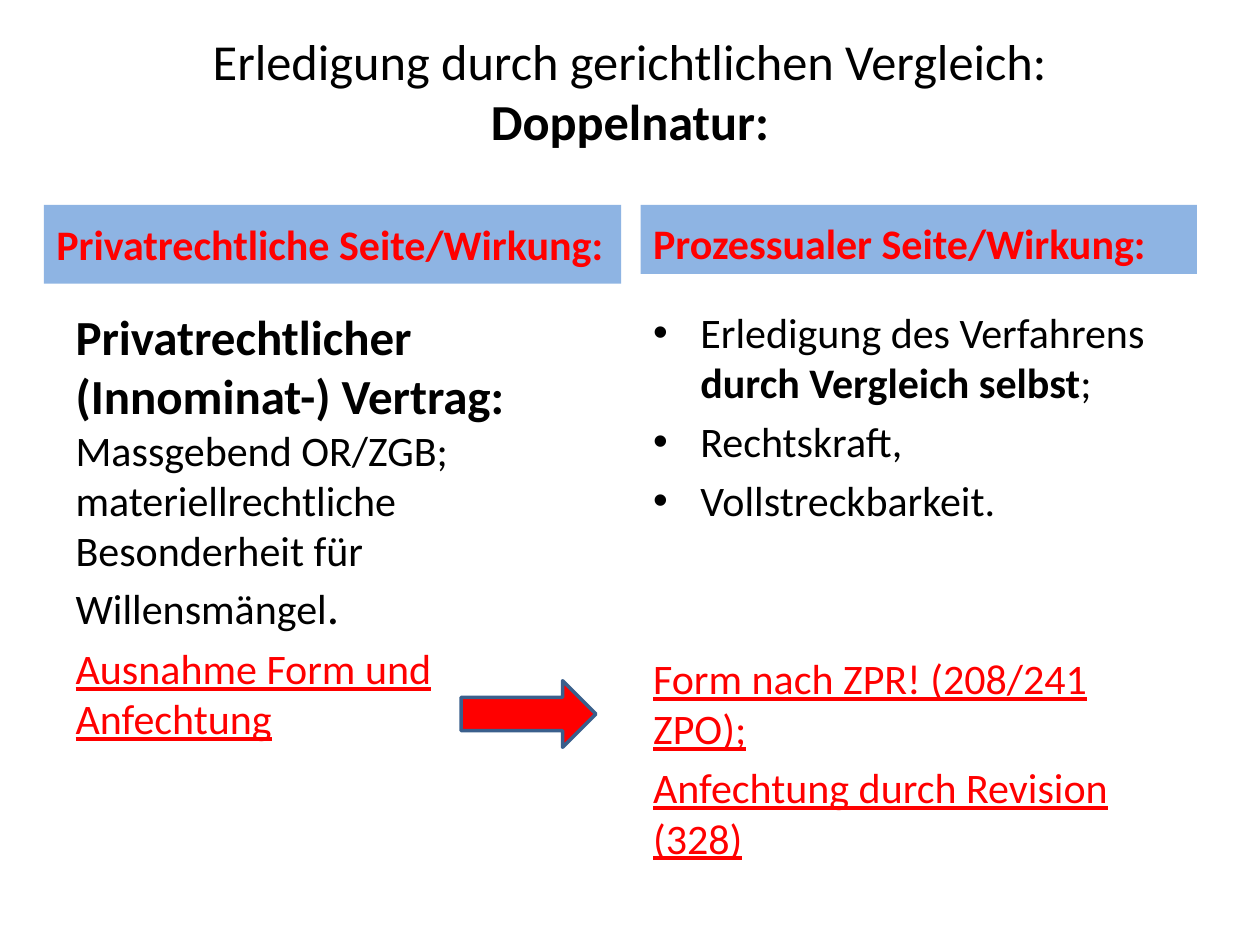
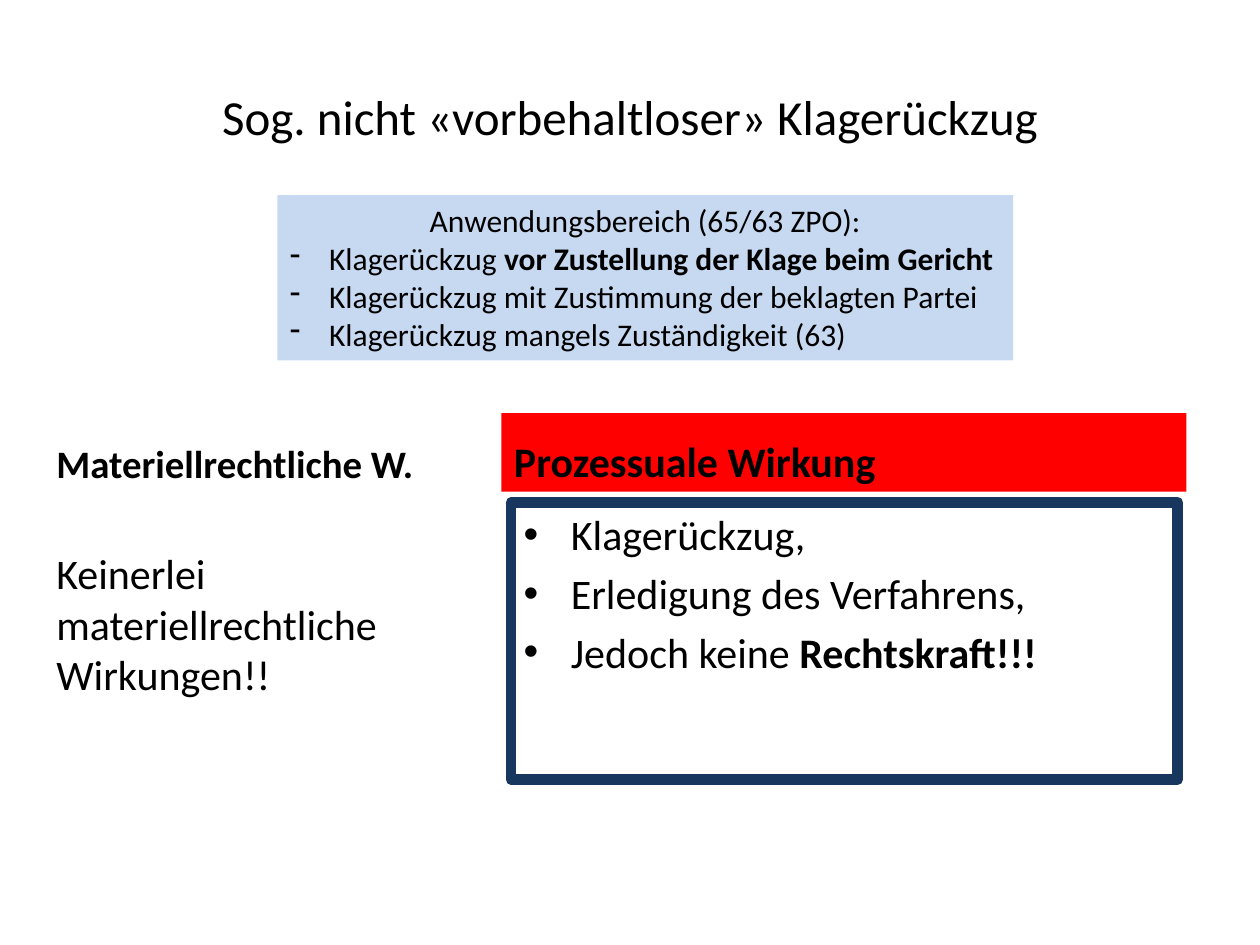
from pptx import Presentation
from pptx.dml.color import RGBColor
from pptx.enum.shapes import MSO_SHAPE
from pptx.enum.text import MSO_ANCHOR, MSO_AUTO_SIZE, PP_ALIGN
from pptx.oxml.xmlchemy import OxmlElement
from pptx.util import Pt

FONT = "Calibri"
COLORS = {
    "text": "000000",
    "red": "FF0000",
    "header": "8EB4E3",
    "scope": "C6D9F1",
    "frame": "17375E",
    "arrow_line": "3A5F8C",
}
COMPARISON_LAYOUT = 3 + 1
TITLE, LEFT_HEADER, LEFT_BODY, RIGHT_HEADER, RIGHT_BODY = range(5)
TITLE_AREA = (36, 21.5, 648, 90)


def color(name):
    return RGBColor.from_string(COLORS[name])


def span(text, size=24, bold=False, ink="text", underline=False):
    return text, size, bold, ink, underline


def add_spans(para, spans):
    """Add the runs to the paragraph; None stands for a line break."""
    for item in spans:
        if item is None:
            para.add_line_break()
            continue
        text, size, bold, ink, underline = item
        run = para.add_run()
        run.text = text
        run.font.name = FONT
        run.font.size = Pt(size)
        run.font.bold = bold
        run.font.underline = underline
        run.font.color.rgb = color(ink)


def set_bullet(para, char, indent):
    """Hang the paragraph on a bullet, or remove the bullet if char is None."""
    properties = para._p.get_or_add_pPr()
    properties.set("marL", str(Pt(indent)))
    properties.set("indent", str(-Pt(indent)))
    bullet = OxmlElement("a:buChar" if char else "a:buNone")
    if char:
        bullet.set("char", char)
    properties.append(bullet)


def write_paragraphs(box, paragraphs, bullet=None, indent=0):
    frame = box.text_frame
    for number, spans in enumerate(paragraphs):
        para = frame.paragraphs[0] if number == 0 else frame.add_paragraph()
        add_spans(para, spans)
        set_bullet(para, bullet, indent)
    return frame.paragraphs


def move(box, area):
    box.left, box.top, box.width, box.height = map(Pt, area)


def place(page, index, area, anchor, fill=None):
    """Move a placeholder of the page and set its text anchor and fill."""
    box = page.placeholders[index]
    move(box, area)
    frame = box.text_frame
    frame.word_wrap = True
    frame.auto_size = MSO_AUTO_SIZE.NONE
    frame.vertical_anchor = anchor
    if fill:
        box.fill.solid()
        box.fill.fore_color.rgb = color(fill)
    return box


def add_title(page, spans):
    box = place(page, TITLE, TITLE_AREA, MSO_ANCHOR.MIDDLE)
    para = box.text_frame.paragraphs[0]
    para.alignment = PP_ALIGN.CENTER
    add_spans(para, spans)
    return box


def add_header(page, index, area, text, fill=None, ink="text", size=24,
               anchor=MSO_ANCHOR.BOTTOM):
    box = place(page, index, area, anchor, fill)
    write_paragraphs(box, [[span(text, size, True, ink)]])


def add_body(page, index, area, paragraphs, bullet=None):
    box = place(page, index, area, MSO_ANCHOR.TOP)
    write_paragraphs(box, paragraphs, bullet, 27 if bullet else 0)
    return box


def add_arrow(page, area):
    arrow = page.shapes.add_shape(MSO_SHAPE.RIGHT_ARROW, *map(Pt, area))
    arrow.shadow.inherit = False
    arrow.fill.solid()
    arrow.fill.fore_color.rgb = color("red")
    arrow.line.color.rgb = color("arrow_line")
    arrow.line.width = Pt(2)


def add_scope_box(page, area, heading, items):
    box = page.shapes.add_textbox(*map(Pt, area))
    box.fill.solid()
    box.fill.fore_color.rgb = color("scope")
    frame = box.text_frame
    frame.word_wrap = False
    frame.paragraphs[0].alignment = PP_ALIGN.CENTER
    add_spans(frame.paragraphs[0], [heading])
    for spans in items:
        para = frame.add_paragraph()
        para.alignment = PP_ALIGN.LEFT
        add_spans(para, spans)
        set_bullet(para, "-", 22.5)


def build_settlement(page):
    title = add_title(page, [
        span("Erledigung durch gerichtlichen Vergleich:", 28.8), None,
        span("Doppelnatur:", 28.8, True)])
    title.text_frame.margin_top = 0
    title.text_frame.margin_bottom = Pt(30)

    add_header(page, LEFT_HEADER, (25, 117, 330, 45),
               "Privatrechtliche Seite/Wirkung:", "header", "red",
               anchor=MSO_ANCHOR.MIDDLE)
    add_header(page, RIGHT_HEADER, (366, 117, 318, 39.5),
               "Prozessualer Seite/Wirkung:", "header", "red")

    add_body(page, LEFT_BODY, (36, 171.5, 318, 311), [
        [span("Privatrechtlicher (Innominat-) Vertrag:", 28, True), None,
         span("Massgebend OR/ZGB; materiellrechtliche Besonderheit für "
              "Willensmängel"),
         span(".", 28)],
        [span("Ausnahme Form und Anfechtung", ink="red", underline=True)]])

    effects = add_body(page, RIGHT_BODY, (366, 171.5, 318, 311), [
        [span("Erledigung des Verfahrens "),
         span("durch Vergleich selbst", bold=True), span(";")],
        [span("Rechtskraft,")],
        [span("Vollstreckbarkeit.")]], "•")
    for text, gap in (("Form nach ZPR! (208/241 ZPO);", 73),
                      ("Anfechtung durch Revision (328)", 4.8)):
        para = effects.text_frame.add_paragraph()
        para.space_before = Pt(gap)
        add_spans(para, [span(text, ink="red", underline=True)])
        set_bullet(para, None, 0)

    add_arrow(page, (263.5, 389, 77, 38))


def build_withdrawal(page):
    add_title(page, [span("Sog. nicht «vorbehaltloser» Klagerückzug", 28)])
    add_header(page, LEFT_HEADER, (25, 230.5, 232.5, 51),
               "Materiellrechtliche W.", size=22.2)
    add_body(page, LEFT_BODY, (25, 309.5, 245, 127.5),
             [[span("Keinerlei materiellrechtliche Wirkungen!!")]])
    add_header(page, RIGHT_HEADER, (286.5, 236, 391.5, 45),
               "Prozessuale Wirkung", "red")
    effects = add_body(page, RIGHT_BODY, (292, 287, 381, 158.5), [
        [span("Klagerückzug,")],
        [span("Erledigung des Verfahrens,")],
        [span("Jedoch keine "), span("Rechtskraft!!!", bold=True)]], "•")
    effects.line.color.rgb = color("frame")
    effects.line.width = Pt(6)
    add_scope_box(
        page, (158.5, 111.5, 420.5, 94.5),
        span("Anwendungsbereich (65/63 ZPO):", 18), [
            [span("Klagerückzug ", 18),
             span("vor Zustellung der Klage beim Gericht", 18, True)],
            [span("Klagerückzug mit Zustimmung der beklagten Partei", 18)],
            [span("Klagerückzug mangels Zuständigkeit (63)", 18)]])


def main():
    deck = Presentation()
    deck.slide_width, deck.slide_height = Pt(720), Pt(540)
    for build in (build_settlement, build_withdrawal):
        build(deck.slides.add_slide(deck.slide_layouts[COMPARISON_LAYOUT]))
    deck.save("out.pptx")


if __name__ == "__main__":
    main()
